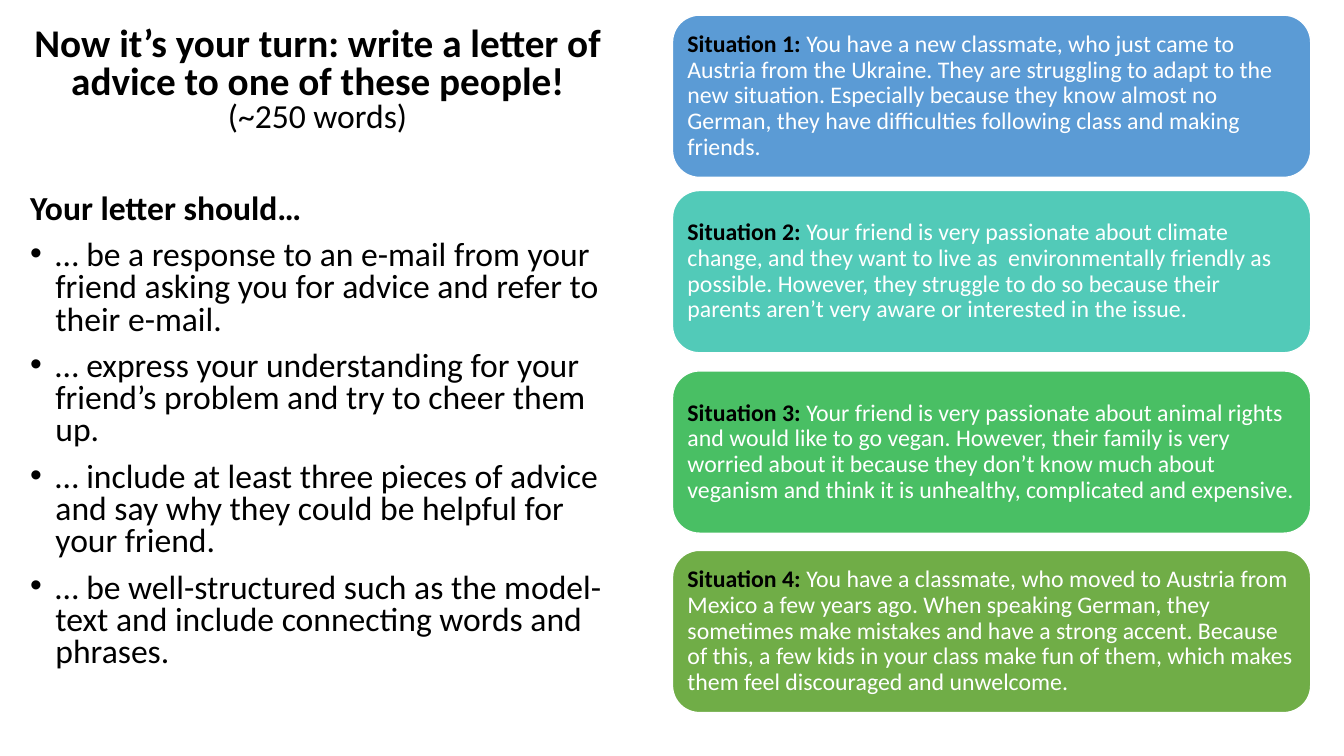
from lxml.etree import SubElement
from pptx import Presentation
from pptx.dml.color import RGBColor as Rgb
from pptx.enum.shapes import MSO_SHAPE as Shape
from pptx.enum.text import MSO_ANCHOR as Anchor, MSO_AUTO_SIZE as Auto, PP_ALIGN as Align
from pptx.oxml.ns import qn
from pptx.util import Inches, Pt

TASKS = [
    "… be a response to an e-mail from your friend asking you for advice and refer to their e-mail.",
    "… express your understanding for your friend’s problem and try to cheer them up.",
    "… include at least three pieces of advice and say why they could be helpful for your friend.",
    "… be well-structured such as the model-text and include connecting words and phrases.",
]
CASES = [
    (0.15, "5B9BD5", "You have a new classmate, who just came to Austria from the Ukraine. They are struggling to adapt to the new situation. Especially because they know almost no German, they have difficulties following class and making friends."),
    (1.89, "52CAB8", "Your friend is very passionate about climate change, and they want to live as  environmentally friendly as possible. However, they struggle to do so because their parents aren’t very aware or interested in the issue."),
    (3.68, "49BF64", "Your friend is very passionate about animal rights and would like to go vegan. However, their family is very worried about it because they don’t know much about veganism and think it is unhealthy, complicated and expensive."),
    (5.46, "70AD47", "You have a classmate, who moved to Austria from Mexico a few years ago. When speaking German, they sometimes make mistakes and have a strong accent. Because of this, a few kids in your class make fun of them, which makes them feel discouraged and unwelcome."),
]


def color(code):
    return Rgb.from_string(code)


def apply(item, values):
    for name, value in values.items():
        setattr(item, name, value)


def place(item, left, top, width, height):
    sizes = dict(left=left, top=top, width=width, height=height)
    apply(item, {name: Inches(size) for name, size in sizes.items()})


def frame(item, anchor, side, edge):
    text = item.text_frame
    apply(text, dict(
        word_wrap=True, auto_size=Auto.NONE, vertical_anchor=anchor,
        margin_left=Inches(side), margin_right=Inches(side),
        margin_top=Inches(edge), margin_bottom=Inches(edge),
    ))
    return text


def write(para, text, size, bold=False, code="000000"):
    run = para.add_run()
    run.text = text
    apply(run.font, dict(name="Calibri", size=Pt(size), bold=bold))
    run.font.color.rgb = color(code)


def space(para, align=Align.LEFT, line=0.8, before=10):
    apply(para, dict(alignment=align, line_spacing=line, space_before=Pt(before)))


def bullet(para, mark=None):
    props = para._p.get_or_add_pPr()
    indent = Inches(0.25) if mark else 0
    props.set("marL", str(indent))
    props.set("indent", str(-indent))
    if mark:
        SubElement(props, qn("a:buFont"), typeface="Arial")
        SubElement(props, qn("a:buChar"), char=mark)
    else:
        SubElement(props, qn("a:buNone"))


def add_title(title):
    place(title, 0.2, 0.22, 5.9, 1.4)
    para = frame(title, Anchor.TOP, 0.1, 0.05).paragraphs[0]
    space(para, Align.CENTER)
    write(para, "Now it’s your turn: write a letter of advice to one of these people!", 28, True)
    para.add_line_break()
    write(para, "(~250 words)", 24)


def add_list(body):
    place(body, 0.2, 1.88, 5.9, 5.4)
    text = frame(body, Anchor.TOP, 0.1, 0.05)
    head = text.paragraphs[0]
    space(head)
    bullet(head)
    write(head, "Your letter should…", 24, True)
    for task in TASKS:
        para = text.add_paragraph()
        space(para)
        bullet(para, "•")
        write(para, task, 24)


def add_card(slide, label, top, fill, story):
    card = slide.shapes.add_shape(Shape.ROUNDED_RECTANGLE, 0, 0, 0, 0)
    place(card, 6.67, top, 6.33, 1.61)
    card.shadow.inherit = False
    card.fill.solid()
    card.fill.fore_color.rgb = color(fill)
    card.line.color.rgb = color("FFFFFF")
    card.line.width = Pt(1)
    para = frame(card, Anchor.MIDDLE, 0.07, 0.07).paragraphs[0]
    space(para, line=0.9, before=0)
    write(para, label, 17, True)
    write(para, story, 17, code="FFFFFF")


def main():
    deck = Presentation()
    apply(deck, dict(slide_width=Inches(13.33), slide_height=Inches(7.5)))
    slide = deck.slides.add_slide(deck.slide_layouts[1])
    add_title(slide.shapes.title)
    add_list(slide.placeholders[1])
    for count, (top, fill, story) in enumerate(CASES, 1):
        add_card(slide, f"Situation {count}: ", top, fill, story)
    deck.save("out.pptx")


if __name__ == "__main__":
    main()
